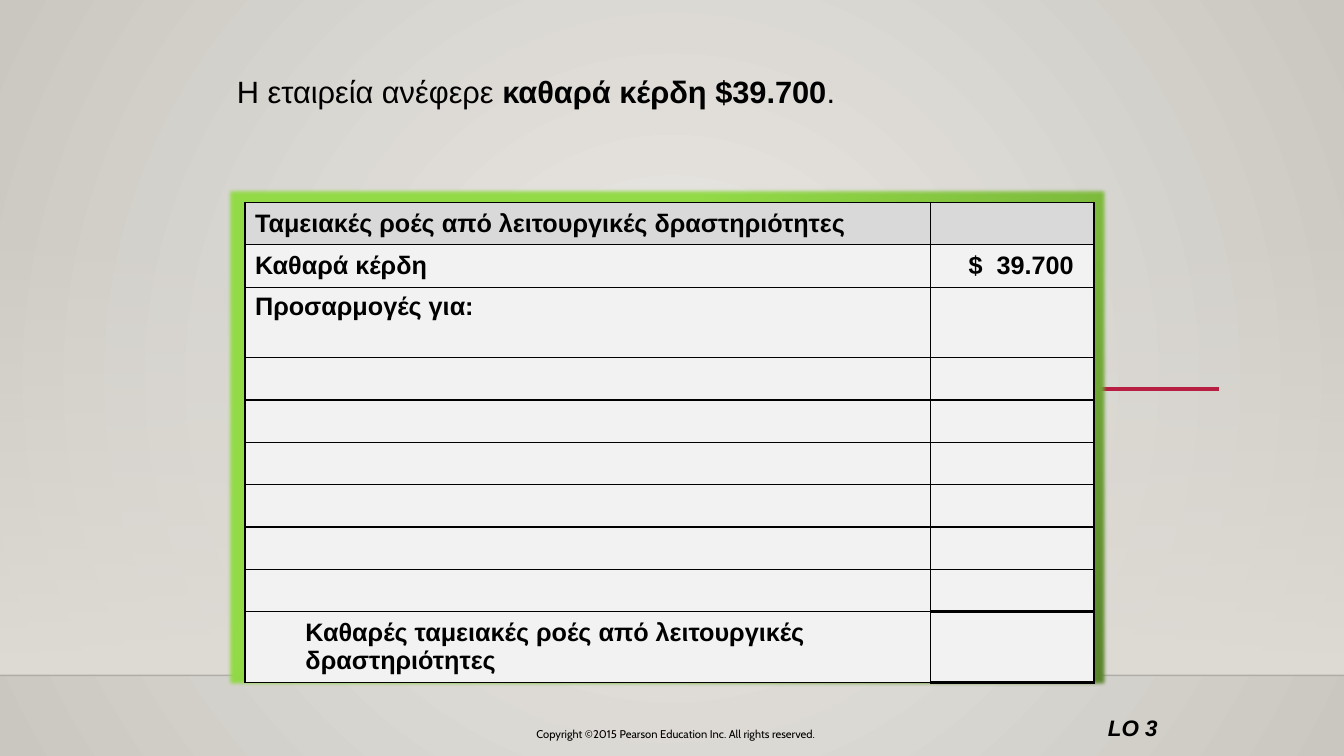
from lxml import etree
from pptx import Presentation
from pptx.dml.color import RGBColor
from pptx.enum.shapes import MSO_CONNECTOR as CONN, MSO_SHAPE as SHAPE
from pptx.enum.text import MSO_ANCHOR as ANCHOR, MSO_AUTO_SIZE as AUTO, PP_ALIGN as ALIGN
from pptx.oxml import parse_xml
from pptx.oxml.ns import nsdecls, qn
from pptx.util import Inches, Pt

BLACK = "000000"
CIRCLE = ('<a:path path="circle"><a:fillToRect l="50000" t="50000" '
          'r="50000" b="50000"/></a:path>')
ROWS = [
    ("Ταμειακές ροές από λειτουργικές δραστηριότητες", ""),
    ("Καθαρά κέρδη", "$  39.700"),
    ("Προσαρμογές για:", ""),
    *[("", "")] * 6,
    ("Καθαρές ταμειακές ροές από λειτουργικές δραστηριότητες", ""),
]


def rgb(color):
    """Turn a hex string into a colour."""
    return RGBColor.from_string(color)


def inches(*values):
    """Turn numbers into lengths."""
    return [Inches(v) for v in values]


def gradient(stops, angle=None):
    """Build a gradient fill from (position, colour, opacity) stops."""
    gs = "".join(
        f'<a:gs pos="{pos * 1000}"><a:srgbClr val="{color}">'
        f'<a:alpha val="{alpha * 1000}"/></a:srgbClr></a:gs>'
        for pos, color, alpha in stops)
    shade = CIRCLE if angle is None else f'<a:lin ang="{angle * 60000}" scaled="0"/>'
    return parse_xml(f'<a:gradFill {nsdecls("a")} rotWithShape="1">'
                     f'<a:gsLst>{gs}</a:gsLst>{shade}</a:gradFill>')


def add_text(p, text, size=18, font="Arial", bold=False, italic=False, align=ALIGN.LEFT):
    """Add a formatted run to a paragraph."""
    p.alignment = align
    r = p.add_run()
    r.text = text
    r.font.size, r.font.name = Pt(size), font
    r.font.bold, r.font.italic = bold, italic
    r.font.color.rgb = rgb(BLACK)


def add_panel(s, box, stops, angle):
    """Draw a borderless gradient rectangle."""
    sp = s.shapes.add_shape(SHAPE.RECTANGLE, *inches(*box))
    sp.shadow.inherit = False
    sp.line.fill.background()
    sp.fill.solid()
    solid = sp._element.spPr.find(qn("a:solidFill"))
    solid.getparent().replace(solid, gradient(stops, angle))
    return sp


def add_line(s, x, y, width, color, weight, alpha=100):
    """Draw a horizontal line."""
    sp = s.shapes.add_connector(CONN.STRAIGHT, *inches(x, y, x + width, y))
    sp.line.color.rgb = rgb(color)
    sp.line.width = Pt(weight)
    clr = sp._element.spPr.find(".//" + qn("a:srgbClr"))
    etree.SubElement(clr, qn("a:alpha"), val=str(alpha * 1000))
    etree.SubElement(sp._element.spPr, qn("a:effectLst"))


def add_backdrop(s, width, height):
    """Fill the background and draw the floor and accent lines."""
    fill = s.background.fill
    fill.solid()
    solid = s._element.find(".//" + qn("p:bgPr")).find(qn("a:solidFill"))
    solid.getparent().replace(
        solid, gradient([(0, "ECEAE7", 100), (100, "CAC7C1", 100)]))
    floor = height - 0.8
    add_panel(s, (0, 2.21, width, floor - 2.21),
              [(0, "DFDBD5", 0), (100, "DFDBD5", 100)], 90)
    add_line(s, 0, floor, width, "000001", 1, 20)
    add_line(s, 2.64, 3.86, 9.45, "B71E42", 2.5)


def add_title(s, box):
    """Place the headline in the title placeholder."""
    sp = s.shapes.title
    sp.left, sp.top, sp.width, sp.height = inches(*box)
    tf = sp.text_frame
    tf.auto_size, tf.word_wrap = AUTO.NONE, True
    tf.vertical_anchor = ANCHOR.TOP
    tf.margin_left, tf.margin_top, tf.margin_right, tf.margin_bottom = inches(
        0.1, 0.13, 0.1, 0.1)
    p = tf.paragraphs[0]
    p.line_spacing = 1.25
    for text, bold in (("Η εταιρεία ανέφερε ", False),
                       ("καθαρά κέρδη $39.700", True), (".", False)):
        add_text(p, text, size=22, bold=bold)


def add_label(s, box, text, **fmt):
    """Add a one-line text box."""
    tf = s.shapes.add_textbox(*inches(*box)).text_frame
    tf.word_wrap = True
    add_text(tf.paragraphs[0], text, **fmt)


def style_cell(cell, color, top=1, bottom=1):
    """Set the borders and fill of a cell."""
    tcPr = cell._tc.get_or_add_tcPr()
    for side, weight in zip("LRTB", (1, 1, top, bottom)):
        tcPr.append(parse_xml(
            f'<a:ln{side} {nsdecls("a")} w="{Pt(weight)}"><a:solidFill>'
            f'<a:srgbClr val="{BLACK}"/></a:solidFill></a:ln{side}>'))
    cell.fill.solid()
    cell.fill.fore_color.rgb = rgb(color)


def add_cash_flows(s, x, y, width, height):
    """Draw the green frame with the cash flow table inside."""
    frame = add_panel(s, (x, y, width, height),
                      [(0, "57812A", 100), (33, "7BB73B", 100), (65, "92DA46", 100)], 225)
    effects = frame._element.spPr.find(qn("a:effectLst"))
    etree.SubElement(effects, qn("a:softEdge"), rad=str(Pt(2)))
    box = (x + 0.18, y + 0.15, width - 0.32, height - 0.17)
    table = s.shapes.add_table(len(ROWS), 2, *inches(*box)).table
    table.first_row = table.horz_banding = False
    table.columns[0].width, table.columns[1].width = inches(6.8, 1.62)
    last = len(ROWS) - 1
    for i, texts in enumerate(ROWS):
        table.rows[i].height = Inches(0.7 if i in (2, last) else 0.42)
        for j, text in enumerate(texts):
            cell = table.cell(i, j)
            style_cell(cell, "F2F2F2" if i else "D9D9D9",
                       top=2.25 if j and i == last else 1,
                       bottom=2.25 if j and i >= last - 1 else 1)
            cell.vertical_anchor = ANCHOR.TOP if i == 2 else ANCHOR.MIDDLE
            if j:
                cell.margin_right = Inches(0.2)
            elif i == last:
                cell.margin_left = Inches(0.6)
            if text:
                add_text(cell.text_frame.paragraphs[0], text, bold=True,
                         align=ALIGN.RIGHT if j else ALIGN.LEFT)


def main():
    """Build and save the slide."""
    prs = Presentation()
    prs.slide_width, prs.slide_height = inches(13.33, 7.5)
    s = prs.slides.add_slide(prs.slide_layouts[5])
    add_backdrop(s, 13.33, 7.5)
    add_label(s, (10.75, 7.04, 0.83, 0.37), "LO 3", size=16, bold=True,
              italic=True, align=ALIGN.RIGHT)
    add_cash_flows(s, 2.25, 1.86, 8.74, 4.96)
    add_title(s, (2.25, 0.5, 9.08, 0.62))
    add_label(s, (4.33, 7.17, 4.75, 0.25),
              "Copyright ©2015 Pearson Education Inc. All rights reserved.",
              size=8, font="Cabin", align=ALIGN.CENTER)
    prs.save("out.pptx")


if __name__ == "__main__":
    main()
